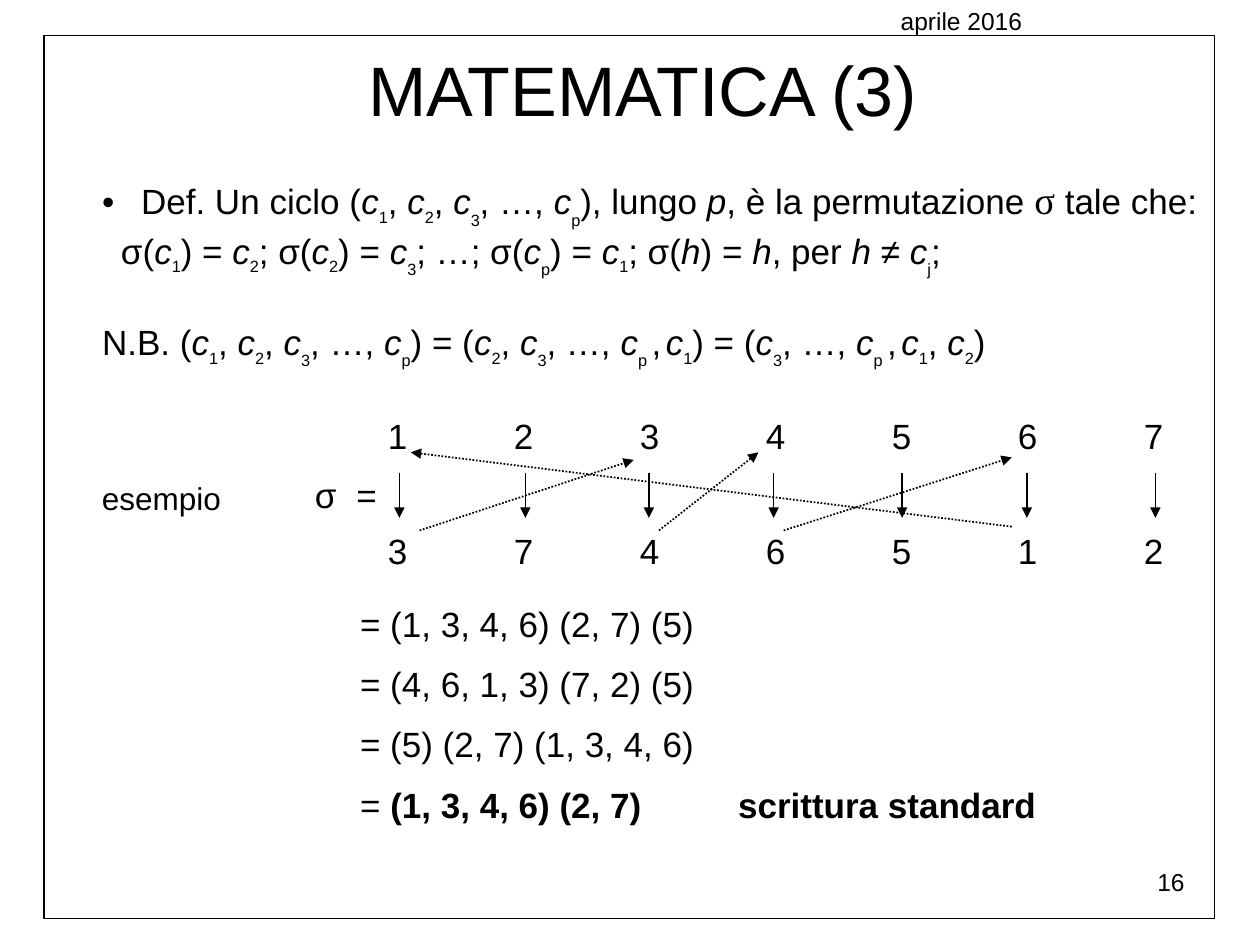
from dataclasses import dataclass

from lxml.etree import SubElement
from pptx import Presentation
from pptx.dml.color import RGBColor
from pptx.enum.dml import MSO_LINE_DASH_STYLE as Dash
from pptx.enum.shapes import MSO_CONNECTOR as Connector, MSO_SHAPE as Shape
from pptx.enum.text import MSO_ANCHOR as Anchor, MSO_AUTO_SIZE as AutoSize, PP_ALIGN as Align
from pptx.oxml.ns import qn
from pptx.util import Inches, Pt


@dataclass(frozen=True)
class Theme:
    ink: RGBColor = RGBColor(0, 0, 0)
    font: str = "Arial"
    greek_font: str = "Times New Roman"
    title: int = 40
    greek: int = 22
    body: int = 20
    label: int = 18
    subscript: int = 16
    small: int = 14


THEME = Theme()
ARROW_COLUMNS = (3.17, 4.17, 5.15, 6.14, 7.16, 8.15, 9.17)
CYCLE_ARROWS = (
    ((3.33, 4.21), (5.03, 3.65)),
    ((5.23, 4.21), (6.02, 3.59)),
    ((6.22, 4.21), (8.03, 3.63)),
    ((8.03, 4.18), (3.26, 3.59)),
)
DEFINITION = "Def. Un ciclo (~c1~, ~c2~, ~c3~, …, ~cp~), lungo ~p~, è la permutazione "
IMAGES = ("σ(~c1~) = ~c2~; σ(~c2~) = ~c3~; …; σ(~cp~) = ~c1~; "
          "σ(~h~) = ~h~, per ~h~ ≠ ~cj~;")
ROTATIONS = ("N.B. (~c1~, ~c2~, ~c3~, …, ~cp~) = (~c2~, ~c3~, …, ~cp ~,~ ~~c1~) = "
             "(~c3~, …, ~cp ~,~ ~~c1~, ~c2~)")


def add_run(paragraph, text, *, size=THEME.body, font=THEME.font,
            bold=False, italic=False, baseline=0):
    run = paragraph.add_run()
    run.text = text
    run.font.size = Pt(size)
    run.font.name = font
    run.font.bold = bold
    run.font.italic = italic
    run.font.color.rgb = THEME.ink
    if baseline:
        run._r.get_or_add_rPr().set("baseline", str(baseline * 1000))


def add_formula(paragraph, text):
    """Between tildes, the first letter is an italic variable and the rest its subscript."""
    for position, piece in enumerate(text.split("~")):
        if position % 2 == 0:
            if piece:
                add_run(paragraph, piece)
            continue
        variable = piece[0] if piece[0].isalpha() else ""
        index = piece[len(variable):]
        if variable:
            add_run(paragraph, variable, italic=True)
        if index:
            add_run(paragraph, index, size=THEME.subscript,
                    baseline=-30 if index in "12" else -40)


def place(shape, left, top, width, height):
    shape.left, shape.top = Inches(left), Inches(top)
    shape.width, shape.height = Inches(width), Inches(height)


def add_text(shapes, box, text, *, align=Align.LEFT, tab_stops=(), **run_format):
    frame = shapes.add_textbox(*map(Inches, box)).text_frame
    frame.word_wrap = True
    paragraph = frame.paragraphs[0]
    paragraph.alignment = align
    if tab_stops:
        set_tab_stops(paragraph, tab_stops)
    add_run(paragraph, text, **run_format)
    return frame


def set_tab_stops(paragraph, positions):
    tabs = SubElement(paragraph._p.get_or_add_pPr(), qn("a:tabLst"))
    for position in positions:
        SubElement(tabs, qn("a:tab"), pos=str(Inches(position)), algn="l")


def add_arrow(shapes, start, end, *, dash=None):
    arrow = shapes.add_connector(Connector.STRAIGHT, *map(Inches, start + end))
    arrow.line.color.rgb = THEME.ink
    arrow.line.width = Pt(1)
    if dash:
        arrow.line.dash_style = dash
    SubElement(arrow.line._get_or_add_ln(), qn("a:tailEnd"), type="triangle")
    SubElement(arrow._element.spPr, qn("a:effectLst"))


def set_indent(paragraph, margin, first_line=0, bullet=None):
    properties = paragraph._p.get_or_add_pPr()
    properties.set("marL", str(Inches(margin)))
    properties.set("indent", str(Inches(first_line)))
    if bullet:
        SubElement(properties, qn("a:buChar"), char=bullet)
    else:
        SubElement(properties, qn("a:buNone"))


def fill_title(title):
    place(title, 0.55, 0.32, 9.1, 0.77)
    frame = title.text_frame
    frame.auto_size = AutoSize.NONE
    frame.vertical_anchor = Anchor.MIDDLE
    frame.paragraphs[0].alignment = Align.CENTER
    add_run(frame.paragraphs[0], "MATEMATICA (3)", size=THEME.title)


def fill_definition(body):
    place(body, 0.71, 1.35, 8.98, 1.47)
    frame = body.text_frame
    frame.auto_size = AutoSize.NONE
    frame.vertical_anchor = Anchor.TOP
    definition = frame.paragraphs[0]
    images, rotations = frame.add_paragraph(), frame.add_paragraph()
    for paragraph, before in ((definition, 0), (images, 0), (rotations, 24)):
        paragraph.space_before = Pt(before)
    set_indent(definition, 0.31, -0.31, bullet="•")
    set_indent(images, 0.15)
    set_indent(rotations, 0)
    add_formula(definition, DEFINITION)
    add_run(definition, "σ ", size=THEME.greek, font=THEME.greek_font)
    add_run(definition, "tale che:")
    add_formula(images, IMAGES)
    add_formula(rotations, ROTATIONS)


def add_permutation(shapes):
    for top, height, numbers in ((3.24, 0.36, "1234567"), (4.15, 0.44, "3746512")):
        add_text(shapes, (2.98, top, 6.61, height), "\t".join(numbers),
                 tab_stops=range(1, len(numbers)))
    add_text(shapes, (2.4, 3.71, 0.69, 0.43), "σ\t=", tab_stops=[0.33])
    for column in ARROW_COLUMNS:
        add_arrow(shapes, (column, 3.75), (column, 4.11))
    for start, end in CYCLE_ARROWS:
        add_arrow(shapes, start, end, dash=Dash.ROUND_DOT)


def add_cycle_forms(shapes):
    frame = add_text(shapes, (2.76, 4.73, 6.73, 1.95), "= (1, 3, 4, 6) (2, 7) (5)")
    for text, standard in (
        ("= (4, 6, 1, 3) (7, 2) (5)", ""),
        ("= (5) (2, 7) (1, 3, 4, 6)", ""),
        ("= ", "(1, 3, 4, 6) (2, 7)\tscrittura standard"),
    ):
        paragraph = frame.add_paragraph()
        paragraph.space_before = Pt(10.5)
        add_run(paragraph, text)
        if standard:
            set_tab_stops(paragraph, [3])
            add_run(paragraph, standard, bold=True)


def add_frame(shapes):
    border = shapes.add_shape(Shape.RECTANGLE, *map(Inches, (0.35, 0.28, 9.29, 7.01)))
    border.shadow.inherit = False
    border.fill.background()
    border.line.color.rgb = THEME.ink
    border.line.width = Pt(0.75)
    add_text(shapes, (7.05, 0, 2.2, 0.69), "aprile 2016", size=THEME.small)


def main():
    presentation = Presentation()
    presentation.slide_width, presentation.slide_height = Inches(10), Inches(7.5)
    slide = presentation.slides.add_slide(presentation.slide_layouts[1])
    shapes = slide.shapes
    fill_title(shapes.title)
    fill_definition(slide.placeholders[1])
    add_permutation(shapes.add_group_shape().shapes)
    add_text(shapes, (0.71, 3.75, 1.18, 0.4), "esempio", size=THEME.label)
    add_cycle_forms(shapes)
    add_text(shapes, (7.17, 6.83, 2.33, 0.52), "16", size=THEME.small, align=Align.RIGHT)
    add_frame(shapes.add_group_shape().shapes)
    presentation.save("out.pptx")


if __name__ == "__main__":
    main()
